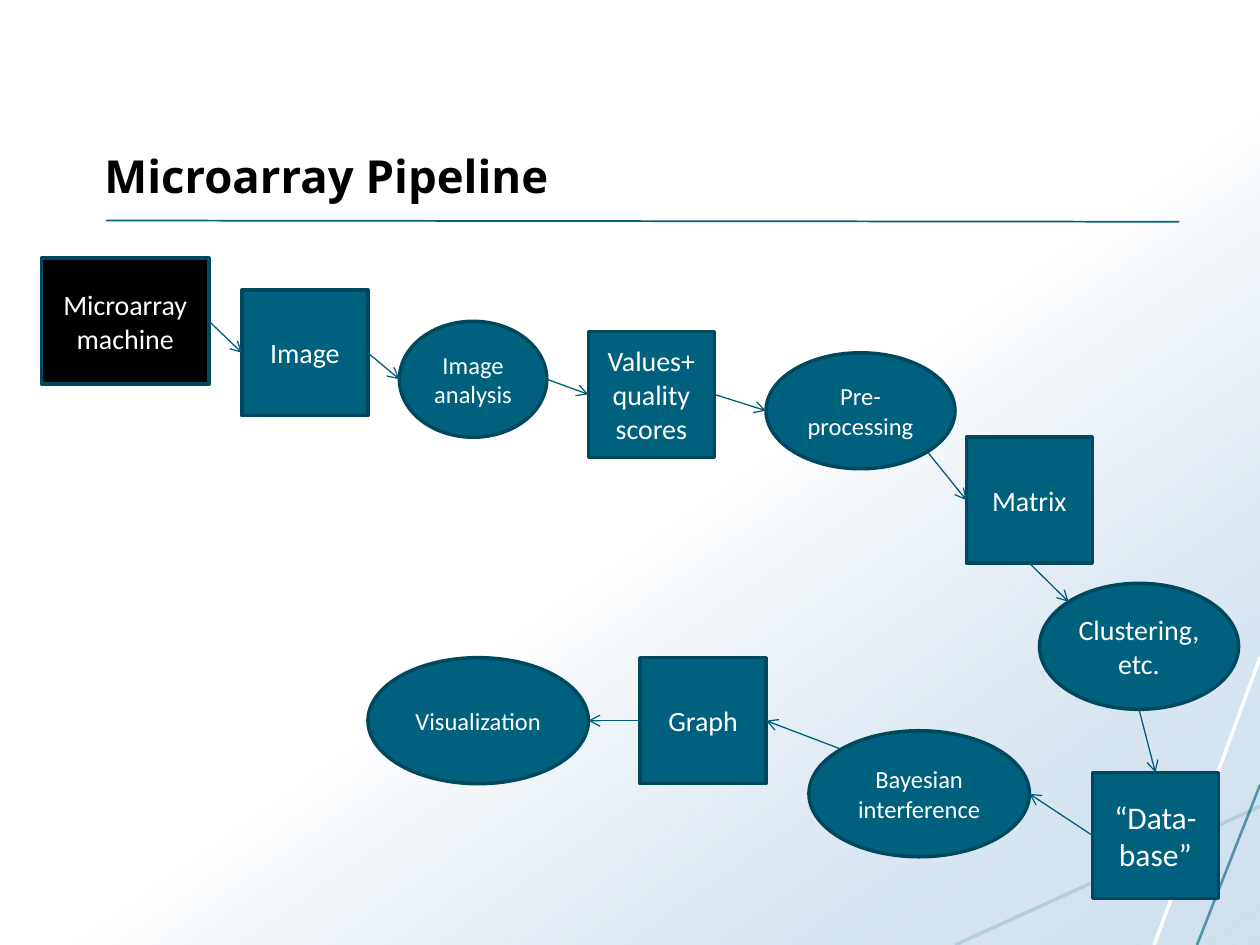
from math import sqrt

from lxml import etree
from pptx import Presentation
from pptx.dml.color import RGBColor
from pptx.enum.shapes import MSO_CONNECTOR, MSO_SHAPE
from pptx.enum.text import MSO_ANCHOR, PP_ALIGN
from pptx.oxml.ns import qn
from pptx.util import Inches, Pt

RECT, OVAL = MSO_SHAPE.RECTANGLE, MSO_SHAPE.OVAL
STRAIGHT = MSO_CONNECTOR.STRAIGHT
MIDDLE, BOTTOM = MSO_ANCHOR.MIDDLE, MSO_ANCHOR.BOTTOM
CENTER = PP_ALIGN.CENTER

COLORS = {
    "white": "FFFFFF", "black": "000000", "sky": "A9C7E0", "teal": "00617F",
    "light": "15718F", "edge": "00485E", "arrow": "005F7C",
}

# Unit directions from a shape's centre, and rectangle connection sites
DIAG = 1 / sqrt(2)
SIDES = {
    "top": (0, -1), "left": (-1, 0), "bottom": (0, 1), "right": (1, 0),
    "top left": (-DIAG, -DIAG), "bottom right": (DIAG, DIAG),
}
SITES = {"top": 0, "left": 1, "bottom": 2, "right": 3}

# Data boxes: text, left, top, width, size, fill
BOXES = {
    "machine": ("Microarray\nmachine", 0.33, 2.05, 1.33, 16, "black"),
    "image": ("Image", 1.92, 2.3, 1, 16, "teal"),
    "values": ("Values+ quality scores", 4.67, 2.63, 1, 16, "teal"),
    "matrix": ("Matrix", 7.67, 3.47, 1, 16, "teal"),
    "base": ("“Data-base”", 8.67, 6.13, 1, 18, "teal"),
    "graph": ("Graph", 5.08, 5.22, 1, 16, "teal"),
}

# Processing steps: text, left, top, width, height, size
STEPS = {
    "analysis": ("Image analysis", 3.17, 2.55, 1.17, 0.92, 14),
    "prep": ("Pre-processing", 6.08, 2.8, 1.5, 0.92, 14),
    "cluster": ("Clustering, etc.", 8.25, 4.63, 1.58, 1, 16),
    "bayes": ("Bayesian interference", 6.42, 5.8, 1.75, 1, 14),
    "visual": ("Visualization", 2.92, 5.22, 1.75, 1, 14),
}

FLOW = [
    ("machine", "right", "image", "left"),
    ("image", "right", "analysis", "left"),
    ("analysis", "right", "values", "left"),
    ("values", "right", "prep", "left"),
    ("prep", "bottom right", "matrix", "left"),
    ("matrix", "bottom", "cluster", "top left"),
    ("cluster", "bottom", "base", "top"),
    ("base", "left", "bayes", "right"),
    ("bayes", "top left", "graph", "right"),
    ("graph", "left", "visual", "right"),
]

# Decorative lines: start, end, colour, width, opacity
RULES = [
    ((10, 5.22), (9.16, 7.5), "white", 2, 100),
    ((10, 6.4), (7.58, 7.5), "light", 2, 16),
    ((10, 6.23), (9.5, 7.5), "teal", 1.5, 60),
    ((0.84, 1.75), (9.36, 1.76), "teal", 1, 100),
]


def color(name):
    return RGBColor.from_string(COLORS[name])


def fade(node, percent):
    """Set the opacity of every colour below an XML node."""
    for rgb in node.iter(qn("a:srgbClr")):
        etree.SubElement(rgb, qn("a:alpha")).set("val", str(percent * 1000))


def style(run, font, size, tint, bold=False):
    run.font.name, run.font.size, run.font.bold = font, Pt(size), bold
    run.font.color.rgb = color(tint)


def add_back(slide):
    back = slide.shapes.add_shape(RECT, 0, 0, Inches(10), Inches(7.5))
    back.shadow.inherit = False
    back.line.fill.background()
    back.fill.gradient()
    back.fill.gradient_angle = 305
    stops = zip(back.fill.gradient_stops, [("white", 0.54), ("sky", 1)])
    for stop, (tint, place) in stops:
        stop.color.rgb, stop.position = color(tint), place
    last = back._element.spPr.find(qn("a:gradFill")).findall(".//" + qn("a:gs"))[-1]
    fade(last, 54)


def add_line(slide, start, end, tint, width):
    line = slide.shapes.add_connector(
        STRAIGHT, *(Inches(n) for n in (*start, *end)))
    line.line.color.rgb = color(tint)
    line.line.width = Pt(width)
    etree.SubElement(line._element.spPr, qn("a:effectLst"))
    return line


def add_title(slide, text):
    box = slide.shapes.add_textbox(
        Inches(0.73), Inches(0.33), Inches(8.62), Inches(1.33))
    frame = box.text_frame
    frame.word_wrap, frame.vertical_anchor = True, BOTTOM
    frame.text = text
    style(frame.paragraphs[0].runs[0], "Open Sans", 26, "black", True)


def add_node(slide, kind, text, left, top, width, height, size, fill):
    node = slide.shapes.add_shape(
        kind, *(Inches(n) for n in (left, top, width, height)))
    node.shadow.inherit = False
    node.fill.solid()
    node.fill.fore_color.rgb = color(fill)
    node.line.color.rgb = color("edge")
    node.line.width = Pt(2)
    frame = node.text_frame
    frame.word_wrap, frame.vertical_anchor = True, MIDDLE
    if kind == OVAL:
        frame.margin_left = frame.margin_right = Inches(0.05)
    frame.text = text
    for para in frame.paragraphs:
        para.alignment = CENTER
        style(para.runs[0], "Calibri", size, "white")
    return node


def find_point(node, side):
    """Point, in inches, where a side's direction meets the outline."""
    dx, dy = SIDES[side]
    x = node.left + node.width * (1 + dx) / 2
    y = node.top + node.height * (1 + dy) / 2
    return x / Inches(1), y / Inches(1)


def add_arrow(slide, start, out, end, into):
    line = add_line(slide, find_point(start, out), find_point(end, into),
                    "arrow", 0.75)
    if start.auto_shape_type == RECT:
        line.begin_connect(start, SITES[out])
    if end.auto_shape_type == RECT:
        line.end_connect(end, SITES[into])
    ln = line.line._get_or_add_ln()
    etree.SubElement(ln, qn("a:tailEnd")).set("type", "arrow")


def main():
    deck = Presentation()
    deck.slide_width, deck.slide_height = Inches(10), Inches(7.5)
    slide = deck.slides.add_slide(deck.slide_layouts[6])

    # Background and title
    add_back(slide)
    for start, end, tint, width, opacity in RULES:
        line = add_line(slide, start, end, tint, width)
        if opacity < 100:
            fade(line._element.spPr, opacity)
    add_title(slide, "Microarray Pipeline")

    # Pipeline
    nodes = {}
    for key, (text, left, top, width, size, fill) in BOXES.items():
        nodes[key] = add_node(slide, RECT, text, left, top, width, 1, size, fill)
    for key, step in STEPS.items():
        nodes[key] = add_node(slide, OVAL, *step, "teal")
    for start, out, end, into in FLOW:
        add_arrow(slide, nodes[start], out, nodes[end], into)

    deck.save("out.pptx")


if __name__ == "__main__":
    main()
